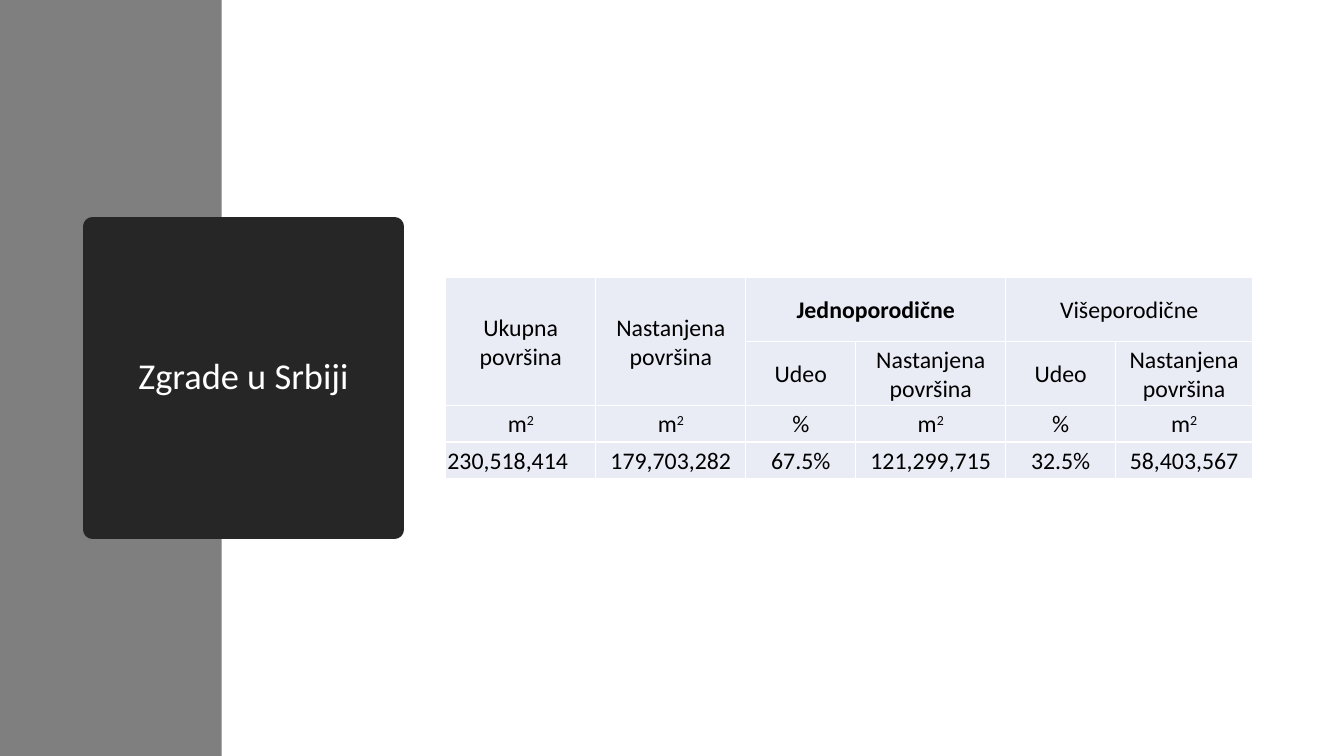
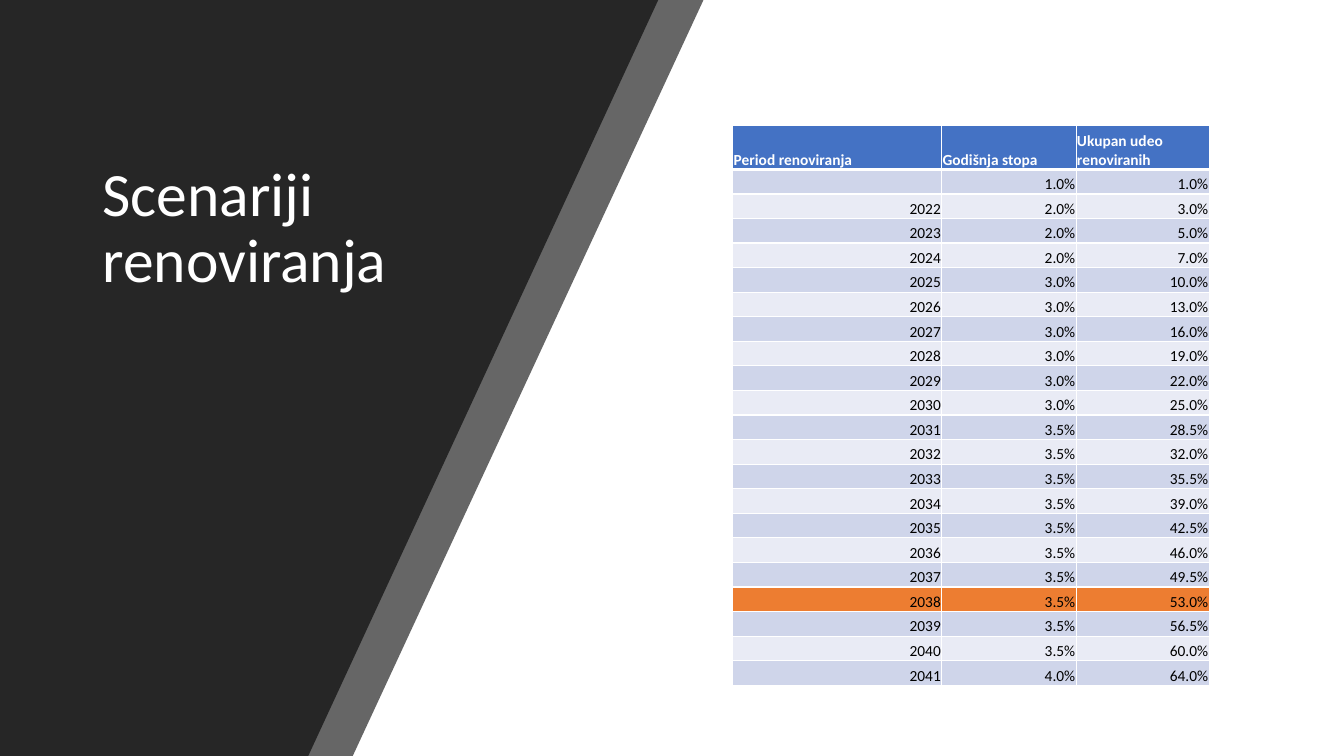
from dataclasses import dataclass
from itertools import accumulate

from lxml import etree
from pptx import Presentation
from pptx.dml.color import RGBColor
from pptx.enum.shapes import MSO_SHAPE
from pptx.enum.text import MSO_ANCHOR, MSO_AUTO_SIZE, PP_ALIGN
from pptx.oxml.ns import qn
from pptx.util import Pt

LEFT, CENTER, RIGHT = PP_ALIGN.LEFT, PP_ALIGN.CENTER, PP_ALIGN.RIGHT
MIDDLE, BOTTOM = MSO_ANCHOR.MIDDLE, MSO_ANCHOR.BOTTOM
RECTANGLE = MSO_SHAPE.RECTANGLE
NO_AUTOFIT = MSO_AUTO_SIZE.NONE

SLIDE_WIDTH, SLIDE_HEIGHT = 960, 540
TITLE_ONLY = 5
FONT = "Calibri"
COLORS = {
    "white": "FFFFFF",
    "black": "000000",
    "dark": "262626",
    "gray": "7F7F7F",
    "header": "4472C4",
    "band": "CFD5EA",
    "light": "E9EBF5",
    "highlight": "ED7D31",
}


@dataclass
class Box:
    left: float
    top: float
    width: float
    height: float

    def lengths(self) -> tuple:
        return Pt(self.left), Pt(self.top), Pt(self.width), Pt(self.height)


@dataclass
class Cell:
    text: str
    fill: str = "light"
    color: str = "black"
    bold: bool = False
    align: PP_ALIGN = CENTER
    rows: int = 1
    columns: int = 1
    bottom_border: float = 1


@dataclass
class TableStyle:
    size: float
    anchor: MSO_ANCHOR
    inset: float


@dataclass
class SlantedPanel:
    top_width: float
    bottom_width: float
    opacity: int


def rgb(name: str) -> RGBColor:
    return RGBColor.from_string(COLORS[name])


def write_text(frame, text: str, *, size: float, color: str, bold: bool = False,
               align: PP_ALIGN = LEFT, line_spacing: float = 1.0) -> None:
    """Write one paragraph; the part after ^ is raised."""
    paragraph = frame.paragraphs[0]
    paragraph.alignment = align
    paragraph.line_spacing = line_spacing
    if not text:
        etree.SubElement(paragraph._p, qn("a:endParaRPr"), sz=str(round(size * 100)))
        return
    for position, part in enumerate(text.split("^")):
        run = paragraph.add_run()
        run.text = part
        run.font.name = FONT
        run.font.size = Pt(size)
        run.font.bold = bold
        run.font.color.rgb = rgb(color)
        if position:
            run.font._element.set("baseline", "30000")


def paint(shape, color: str, opacity: int = 100) -> None:
    shape.shadow.inherit = False
    shape.fill.solid()
    shape.fill.fore_color.rgb = rgb(color)
    shape.line.fill.background()
    if opacity < 100:
        solid_color = shape._element.spPr.find(".//" + qn("a:srgbClr"))
        etree.SubElement(solid_color, qn("a:alpha"), val=str(opacity * 1000))


def place_title(slide, text: str, box: Box, *, size: float, align: PP_ALIGN = LEFT):
    """Move the title placeholder, bring it to the front and fill it."""
    title = slide.shapes.title
    title.left, title.top, title.width, title.height = box.lengths()
    slide.shapes._spTree.append(title._element)
    frame = title.text_frame
    frame.word_wrap = True
    frame.auto_size = NO_AUTOFIT
    frame.vertical_anchor = MIDDLE
    write_text(frame, text, size=size, color="white", align=align, line_spacing=0.9)
    return title


def add_borders(table_cell, bottom: float) -> None:
    properties = table_cell._tc.get_or_add_tcPr()
    for side, width in (("L", 1), ("R", 1), ("T", 1), ("B", bottom)):
        line = etree.SubElement(properties, qn(f"a:ln{side}"), w=str(Pt(width)))
        fill = etree.SubElement(line, qn("a:solidFill"))
        etree.SubElement(fill, qn("a:srgbClr"), val=COLORS["white"])


def add_grid(slide, left: float, top: float, widths: list[float], heights: list[float],
             rows: list[list[Cell | None]], style: TableStyle) -> None:
    """Draw a table; None marks a cell covered by a merged one."""
    box = Box(left, top, sum(widths), sum(heights))
    table = slide.shapes.add_table(len(rows), len(widths), *box.lengths()).table
    table.first_row = table.horz_banding = False
    for column, width in zip(table.columns, widths):
        column.width = Pt(width)
    for row, height in zip(table.rows, heights):
        row.height = Pt(height)
    for row_index, row in enumerate(rows):
        for column_index, entry in enumerate(row):
            cell = table.cell(row_index, column_index)
            add_borders(cell, entry.bottom_border if entry else 1)
            cell.fill.solid()
            cell.fill.fore_color.rgb = rgb(entry.fill if entry else "light")
            if entry is None:
                continue
            cell.margin_left = cell.margin_right = cell.margin_top = Pt(style.inset)
            cell.margin_bottom = 0
            cell.vertical_anchor = style.anchor
            write_text(cell.text_frame, entry.text, size=style.size,
                       color=entry.color, bold=entry.bold, align=entry.align)
            if entry.rows > 1 or entry.columns > 1:
                cell.merge(table.cell(row_index + entry.rows - 1,
                                      column_index + entry.columns - 1))


def build_buildings_slide(presentation) -> None:
    slide = presentation.slides.add_slide(presentation.slide_layouts[TITLE_ONLY])

    # Side band and title block
    side_band = slide.shapes.add_shape(
        RECTANGLE, *Box(0, 0, 158.4, SLIDE_HEIGHT).lengths())
    paint(side_band, "gray")
    title = place_title(slide, "Zgrade u Srbiji", Box(66, 162, 216, 216),
                        size=26, align=CENTER)
    title.fill.solid()
    title.fill.fore_color.rgb = rgb("dark")
    title.line.color.rgb = rgb("dark")
    title.line.width = Pt(13.75)

    # Floor area table
    area = "Nastanjena površina"
    values = ["179,703,282", "67.5%", "121,299,715", "32.5%", "58,403,567"]
    rows = [
        [Cell("Ukupna površina", rows=2), Cell(area, rows=2),
         Cell("Jednoporodične", bold=True, columns=2), None,
         Cell("Višeporodične", columns=2), None],
        [None, None] + [Cell(text) for text in ("Udeo", area) * 2],
        [Cell(text) for text in ("m^2", "m^2", "%", "m^2", "%", "m^2")],
        [Cell("230,518,414", align=LEFT)] + [Cell(text) for text in values],
    ]
    add_grid(slide, 318.4, 198.2, [107.2, 107.2, 78.5, 107.2, 78.5, 97.8],
             [45.8, 45.8, 26, 26], rows, TableStyle(17, MIDDLE, 1.2))


def build_scenarios_slide(presentation) -> None:
    slide = presentation.slides.add_slide(presentation.slide_layouts[TITLE_ONLY])

    # Slanted panels: a translucent edge under the dark one
    for panel in (SlantedPanel(502.5, 252, 70), SlantedPanel(470.2, 220.2, 100)):
        builder = slide.shapes.build_freeform(0, 0, scale=1.0)
        builder.add_line_segments([(Pt(panel.top_width), 0),
                                   (Pt(panel.bottom_width), Pt(SLIDE_HEIGHT)),
                                   (0, Pt(SLIDE_HEIGHT))])
        paint(builder.convert_to_shape(), "dark", panel.opacity)
    place_title(slide, "Scenariji renoviranja", Box(66, 34.5, 258, 259), size=44)

    # Renovation table: the total share is the running sum of yearly rates
    headings = ("Period renoviranja", "Godišnja stopa", "Ukupan udeo renoviranih")
    rows = [[Cell(text, "header", "white", True, LEFT, bottom_border=3)
             for text in headings]]
    rates = [1.0] + [2.0] * 3 + [3.0] * 6 + [3.5] * 10 + [4.0]
    first_year, highlighted_year = 2021, 2038
    for offset, (rate, total) in enumerate(zip(rates, accumulate(rates))):
        year = first_year + offset
        fill = "light" if offset % 2 else "band"
        if year == highlighted_year:
            fill = "highlight"
        texts = (str(year) if offset else "", f"{rate:.1f}%", f"{total:.1f}%")
        rows.append([Cell(text, fill, align=RIGHT) for text in texts])
    add_grid(slide, 523.5, 89.5, [149.2, 96, 95], [31.5] + [17.55] * len(rates),
             rows, TableStyle(11, BOTTOM, 0.6))


def main() -> None:
    presentation = Presentation()
    presentation.slide_width = Pt(SLIDE_WIDTH)
    presentation.slide_height = Pt(SLIDE_HEIGHT)
    build_buildings_slide(presentation)
    build_scenarios_slide(presentation)
    presentation.save("out.pptx")


if __name__ == "__main__":
    main()
